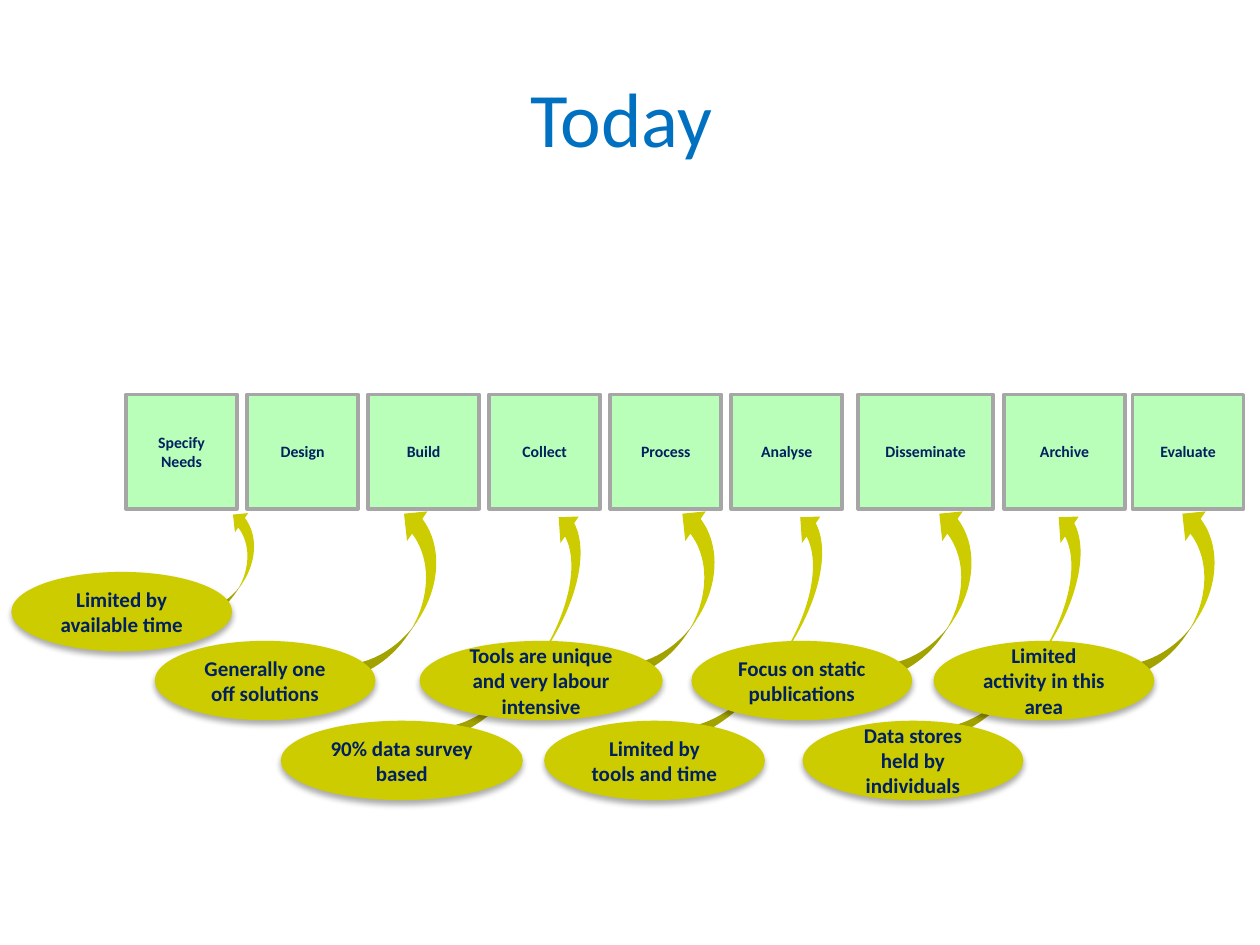
from lxml.etree import SubElement
from pptx import Presentation
from pptx.dml.color import RGBColor
from pptx.enum.shapes import MSO_SHAPE
from pptx.enum.text import MSO_ANCHOR, PP_ALIGN
from pptx.oxml.ns import qn
from pptx.util import Cm, Pt

COLORS = {"title": "0070C0", "text": "002060", "box": "B9FFB9",
          "edge": "A6A6A6", "note": "CCCC00", "shade": "000000"}

TITLE = "Today "  # the closing space is part of the centred line

# Steps on the even grid, then the wider ones: text, left, width
STEPS = ["Specify Needs", "Design", "Build", "Collect", "Process", "Analyse"]
LATE = [("Disseminate", 17.3, 2.72), ("Archive", 20.24, 2.44),
        ("Evaluate", 22.83, 2.24)]
LEFT, PITCH, WIDTH = 2.54, 2.44, 2.24
TOP, HEIGHT = 7.95, 2.31

# Each row of notes: note top, then arrow top, width, height
ROWS = [(11.53, 10.21, 0.94, 2.67),
        (12.92, 10.1, 1.45, 4.17),
        (14.53, 10.03, 1.3, 5.64)]
NOTE_H = 1.6
TILT = 34.6

# Text, row, note left, note width, arrow left
NOTES = [
    ("Limited by available time", 0, 0.23, 4.45, 3.99),
    ("Generally one off solutions", 1, 3.12, 4.45, 7.04),
    ("90% data survey based", 2, 5.66, 4.88, 9.73),
    ("Tools are unique and very labour intensive", 1, 8.46, 4.9, 12.65),
    ("Limited by tools and time", 2, 10.97, 4.45, 14.6),
    ("Focus on static publications", 1, 13.94, 4.45, 17.83),
    ("Data stores held by individuals", 2, 16.18, 4.45, 19.81),
    ("Limited activity in this area", 1, 18.82, 4.45, 22.73),
]


def rgb(name):
    return RGBColor.from_string(COLORS[name])


def write(shape, text, size=12, color="text", bold=True):
    frame = shape.text_frame
    frame.word_wrap = True
    frame.vertical_anchor = MSO_ANCHOR.MIDDLE
    para = frame.paragraphs[0]
    para.alignment = PP_ALIGN.CENTER
    run = para.add_run()
    run.text = text
    font = run.font
    font.name, font.size, font.bold = "Calibri", Pt(size), bold
    font.color.rgb = rgb(color)


def draw(slide, kind, area, fill, edge=None):
    shape = slide.shapes.add_shape(kind, *map(Cm, area))
    shape.shadow.inherit = False
    shape.fill.solid()
    shape.fill.fore_color.rgb = rgb(fill)
    if edge:
        shape.line.color.rgb = rgb(edge)
        shape.line.width = Pt(2)
    else:
        shape.line.fill.background()
    return shape


def shade(shape):
    """Put a soft shadow below the shape."""
    effects = shape.element.spPr.find(qn("a:effectLst"))
    outer = SubElement(effects, qn("a:outerShdw"), blurRad=str(Pt(3.5)),
                       dist=str(Pt(2.2)), dir="5400000", rotWithShape="0")
    color = SubElement(outer, qn("a:srgbClr"), val=COLORS["shade"])
    SubElement(color, qn("a:alpha"), val="32000")


def add_step(slide, text, left, width):
    box = draw(slide, MSO_SHAPE.RECTANGLE, (left, TOP, width, HEIGHT),
               "box", edge="edge")
    write(box, text, size=9)


def add_note(slide, text, row, left, width, tip):
    """Draw the arrow first so that the note covers its tail."""
    top, *span = ROWS[row]
    arrow = draw(slide, MSO_SHAPE.CURVED_LEFT_ARROW, (tip, *span), "note")
    arrow.rotation = TILT
    arrow.element.spPr.find(qn("a:xfrm")).set("flipV", "1")
    note = draw(slide, MSO_SHAPE.OVAL, (left, top, width, NOTE_H), "note")
    shade(note)
    write(note, text)


def main():
    deck = Presentation()
    deck.slide_width, deck.slide_height = Cm(25.4), Cm(19.05)
    slide = deck.slides.add_slide(deck.slide_layouts[6])

    title = slide.shapes.add_textbox(Cm(1.27), Cm(0.76), Cm(22.86), Cm(3.18))
    write(title, TITLE, size=44, color="title", bold=False)

    grid = [(text, LEFT + i * PITCH, WIDTH) for i, text in enumerate(STEPS)]
    for step in grid + LATE:
        add_step(slide, *step)
    for note in NOTES:
        add_note(slide, *note)

    deck.save("out.pptx")


if __name__ == "__main__":
    main()
